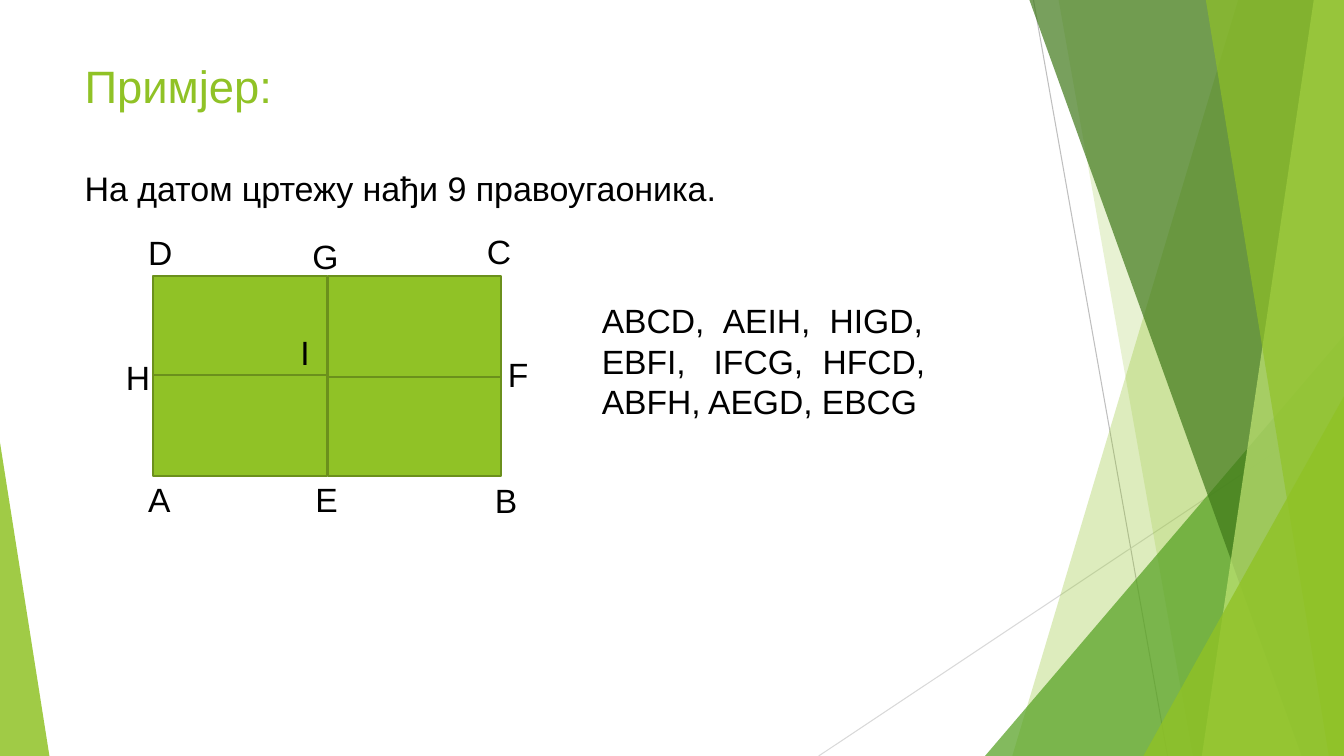
from lxml import etree
from pptx import Presentation
from pptx.dml.color import RGBColor
from pptx.enum.shapes import MSO_CONNECTOR, MSO_SHAPE
from pptx.oxml.ns import qn
from pptx.util import Inches, Pt

LINE = MSO_CONNECTOR.STRAIGHT
RECT = MSO_SHAPE.RECTANGLE
TRIANGLE = MSO_SHAPE.ISOSCELES_TRIANGLE
FONT = "Arial"
COLORS = {
    "lime": "90C226", "green": "54A021", "dark": "3F7819", "pale": "C0E474",
    "edge": "6B901C", "gray": "BFBFBF", "light": "D9D9D9", "black": "000000",
}


def paint(shape, color, alpha=100):
    shape.shadow.inherit = False
    shape.fill.solid()
    shape.fill.fore_color.rgb = RGBColor.from_string(COLORS[color])
    shape.line.fill.background()
    if alpha < 100:
        tint = shape.fill._xPr.find(qn("a:solidFill"))[0]
        etree.SubElement(tint, qn("a:alpha"), val=str(alpha * 1000))


def write(left, top, width, height, rows):
    frame = slide.shapes.add_textbox(
        Inches(left), Inches(top), Inches(width), Inches(height)).text_frame
    frame.word_wrap = True
    for i, (text, size, color) in enumerate(rows):
        para = frame.paragraphs[0] if i == 0 else frame.add_paragraph()
        para.text = text
        for run in para.runs:
            run.font.name = FONT
            run.font.size = Pt(size)
            run.font.color.rgb = RGBColor.from_string(COLORS[color])
    return frame


prs = Presentation()
prs.slide_width, prs.slide_height = Inches(13.33), Inches(7.5)
slide = prs.slides.add_slide(prs.slide_layouts[6])

# Thin lines behind the facets
for x1, y1, x2, y2, color in [(10.25, 0, 11.58, 7.5, "gray"),
                              (13.33, 4.03, 8.12, 7.5, "light")]:
    thin = slide.shapes.add_connector(
        LINE, Inches(x1), Inches(y1), Inches(x2), Inches(y2))
    thin.line.color.rgb = RGBColor.from_string(COLORS[color])
    thin.line.width = Pt(0.75)
    etree.SubElement(thin._element.spPr, qn("a:effectLst"))

# Facets: bands reach the right edge, triangles stand on the bottom
facets = [
    ("band", 12.28, 10.04, "lime", 30),
    ("band", 10.5, 11.83, "lime", 20),
    ("peak", 9.77, 3.56, 3.33, 1, "green", 72),
    ("band", 10.21, 12.91, "dark", 70),
    ("band", 13.03, 11.92, "pale", 70),
    ("band", 11.96, 13.18, "lime", 65),
    ("peak", 11.34, 1.99, 3.93, 1, "lime", 80),
    ("peak", 0, 0.49, 4.39, 0, "lime", 85),
]
for kind, *spec_row, color, alpha in facets:
    if kind == "band":
        high, low = spec_row
        pen = slide.shapes.build_freeform(Inches(high), 0)
        pen.add_line_segments([(Inches(x), Inches(y)) for x, y in
                               [(13.33, 0), (13.33, 7.5), (low, 7.5)]])
        facet = pen.convert_to_shape()
    else:
        left, width, top, tip = spec_row
        facet = slide.shapes.add_shape(
            TRIANGLE, Inches(left), Inches(top), Inches(width), Inches(7.5 - top))
        facet.adjustments[0] = tip
    paint(facet, color, alpha)

# Title and task
head = write(0.74, 0.53, 9.4, 1.63, [
    ("Примјер:", 32.4, "lime"),
    ("На датом цртежу нађи 9 правоугаоника.", 24.3, "black")])
head.paragraphs[1].space_before = Pt(39)

# Four cells of the large rectangle
for col, row in [(0, 0), (0, 1), (1, 1), (1, 0)]:
    cell = slide.shapes.add_shape(
        RECT, Inches(1.52 + 1.73 * col), Inches(2.74 + 0.98 * row),
        Inches(1.72), Inches(1))
    paint(cell, "lime")
    cell.line.color.rgb = RGBColor.from_string(COLORS["edge"])
    cell.line.width = Pt(1.5)

# Point names
points = [("А", 1.37, 4.7), ("B", 4.81, 4.71), ("C", 4.73, 2.24),
          ("D", 1.37, 2.25), ("E", 3.03, 4.7), ("I", 2.88, 3.24),
          ("F", 4.94, 3.46), ("G", 3, 2.29), ("H", 1.15, 3.49)]
for name, left, top in points:
    write(left, top, 0.5, 0.5, [(name, 24, "black")])

# The nine rectangles, with tab stops for the wider gaps
answer = write(5.87, 2.93, 4.48, 1.31, [
    (text, 24, "black") for text in
    ["ABCD,\tAEIH,\tHIGD,", "EBFI,\tIFCG,\tHFCD,", "ABFH, AEGD, EBCG"]])
for para, stops in zip(answer.paragraphs, [(1.2, 2.26), (1.11, 2.19)]):
    tabs = etree.SubElement(para._p.get_or_add_pPr(), qn("a:tabLst"))
    for stop in stops:
        etree.SubElement(tabs, qn("a:tab"), pos=str(Inches(stop)), algn="l")

prs.save("out.pptx")
